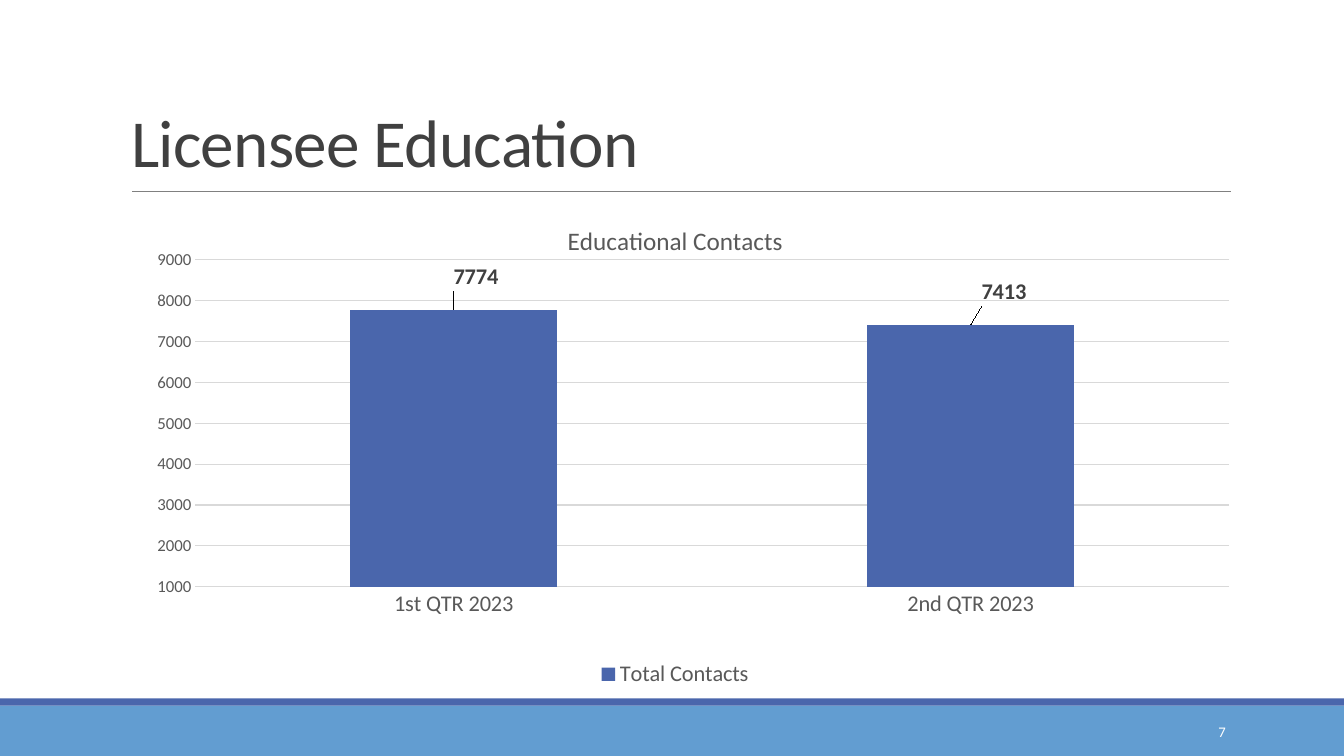
import pptx
import pptx.util
import pptx.dml.color
import pptx.chart.data
import pptx.enum.chart
import pptx.enum.shapes
import pptx.enum.text
import pptx.oxml
import pptx.oxml.ns

Cm = pptx.util.Cm
Pt = pptx.util.Pt


def rgb(value):
    return pptx.dml.color.RGBColor.from_string(value)


def style(font, size, color, bold=False):
    font.name = "Calibri"
    font.size = Pt(size)
    font.bold = bold
    font.color.rgb = rgb(color)


prs = pptx.Presentation()
prs.slide_width = Cm(33.87)
prs.slide_height = Cm(19.05)
s = prs.slides.add_slide(prs.slide_layouts[5])

for top, height, color in [(17.78, 1.27, "629DD1"), (17.6, 0.18, "4A66AC")]:
    band = s.shapes.add_shape(
        pptx.enum.shapes.MSO_SHAPE.RECTANGLE, 0, Cm(top), prs.slide_width, Cm(height))
    band.shadow.inherit = False
    band.fill.solid()
    band.fill.fore_color.rgb = rgb(color)
    band.line.fill.background()

rule = s.shapes.add_connector(
    pptx.enum.shapes.MSO_CONNECTOR.STRAIGHT, Cm(3.33), Cm(4.83), Cm(31.01), Cm(4.83))
rule.line.color.rgb = rgb("808080")
rule.line.width = Pt(0.5)
pptx.oxml.ns.qn("a:effectLst")
rule._element.spPr.append(pptx.oxml.parse_xml(
    f'<a:effectLst {pptx.oxml.ns.nsdecls("a")}/>'))

title = s.shapes.title
title.left, title.top, title.width, title.height = Cm(3.05), Cm(0.66), Cm(27.94), Cm(4.04)
tf = title.text_frame
tf.text = "Licensee Education"
tf.auto_size = pptx.enum.text.MSO_AUTO_SIZE.NONE
tf.vertical_anchor = pptx.enum.text.MSO_ANCHOR.BOTTOM
p = tf.paragraphs[0]
p.alignment = pptx.enum.text.PP_ALIGN.LEFT
p.line_spacing = 0.85
style(p.font, 48, "404040")
p.runs[0].font._element.set("spc", "-50")

data = pptx.chart.data.CategoryChartData()
data.categories = ["1st QTR 2023", "2nd QTR 2023"]
data.add_series("Total Contacts", [7774, 7413])
chart = s.shapes.add_chart(
    pptx.enum.chart.XL_CHART_TYPE.COLUMN_CLUSTERED,
    Cm(3.05), Cm(5.13), Cm(27.94), Cm(12.32), data).chart
style(chart.font, 10, "000000")
chart.has_title = True
chart.chart_title.include_in_layout = False
p = chart.chart_title.text_frame.paragraphs[0]
p.text = "Educational Contacts"
style(p.font, 18, "595959")

chart.has_legend = True
chart.legend.position = pptx.enum.chart.XL_LEGEND_POSITION.BOTTOM
chart.legend.include_in_layout = False
style(chart.legend.font, 16, "595959")

for axis, size in [(chart.category_axis, 16), (chart.value_axis, 12)]:
    axis.major_tick_mark = pptx.enum.chart.XL_TICK_MARK.NONE
    axis.minor_tick_mark = pptx.enum.chart.XL_TICK_MARK.NONE
    axis.format.line.fill.background()
    style(axis.tick_labels.font, size, "595959")

axis = chart.value_axis
axis.minimum_scale = 1000
axis.maximum_scale = 9000
axis.major_unit = 1000
axis.major_gridlines.format.line.color.rgb = rgb("D9D9D9")
axis.major_gridlines.format.line.width = Pt(0.75)

plot = chart.plots[0]
plot.gap_width = 150
plot.vary_by_categories = False
contacts = plot.series[0]
contacts.format.fill.solid()
contacts.format.fill.fore_color.rgb = rgb("4A66AC")

ns = pptx.oxml.ns.nsdecls("c")
for i, shift in enumerate([0.02, 0.03]):
    label = contacts.points[i].data_label
    style(label.font, 16, "404040", True)
    label.position = pptx.enum.chart.XL_LABEL_POSITION.OUTSIDE_END
    label._dLbl.insert(1, pptx.oxml.parse_xml(
        f'<c:layout {ns}><c:manualLayout><c:x val="{shift}"/><c:y val="-0.03"/>'
        '</c:manualLayout></c:layout>'))

area = chart._chartSpace.chart.plotArea
for layout in area.findall(pptx.oxml.ns.qn("c:layout")):
    area.remove(layout)
area.insert(0, pptx.oxml.parse_xml(
    f'<c:layout {ns}><c:manualLayout><c:layoutTarget val="inner"/>'
    '<c:xMode val="edge"/><c:yMode val="edge"/><c:x val="0.067"/><c:y val="0.115"/>'
    '<c:w val="0.933"/><c:h val="0.669"/></c:manualLayout></c:layout>'))

number = s.shapes.add_textbox(Cm(27.51), Cm(17.93), Cm(3.63), Cm(1.02))
tf = number.text_frame
tf.word_wrap = True
tf.vertical_anchor = pptx.enum.text.MSO_ANCHOR.MIDDLE
p = tf.paragraphs[0]
p.text = "7"
p.alignment = pptx.enum.text.PP_ALIGN.RIGHT
style(p.font, 10.5, "FFFFFF")

prs.save("out.pptx")
